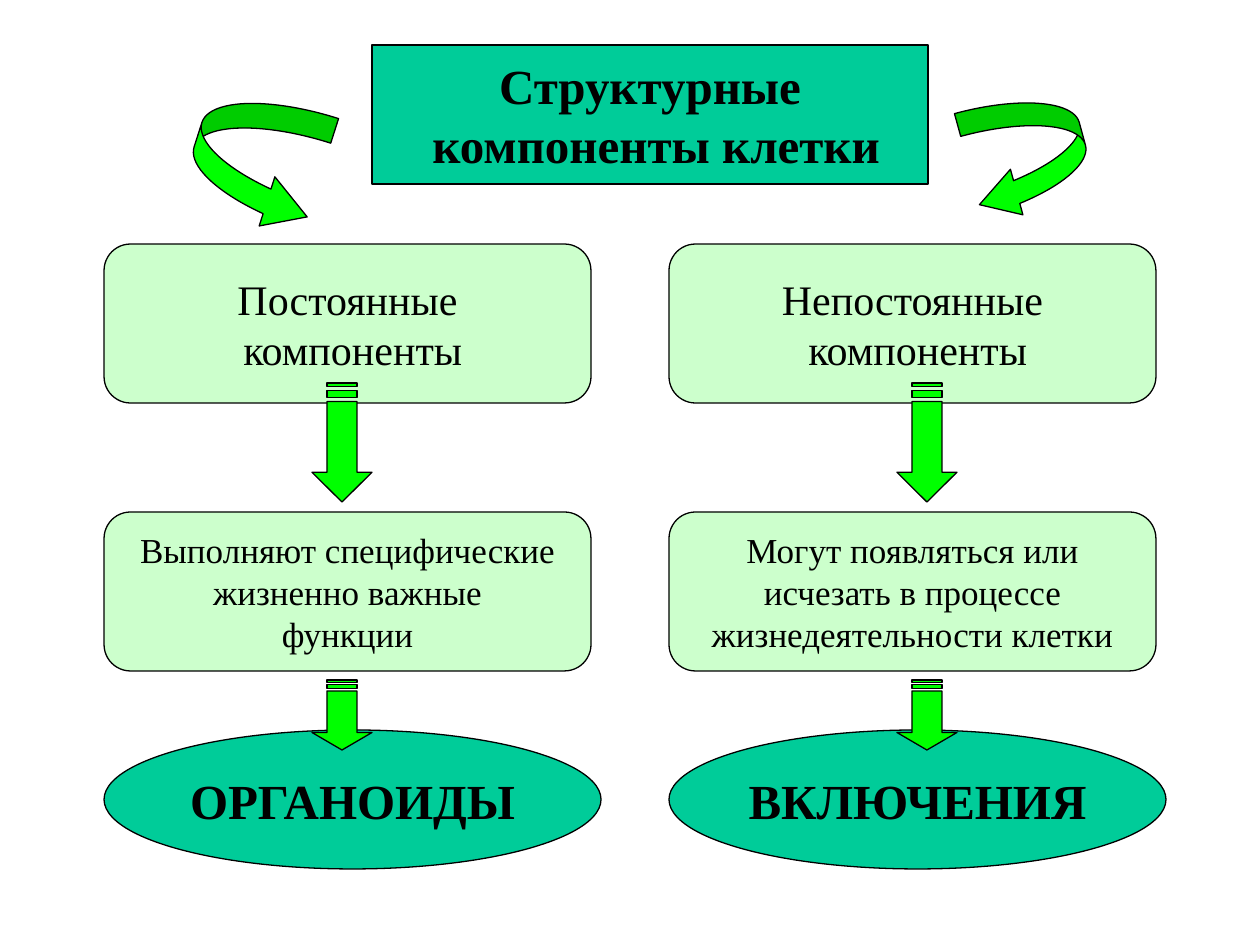
from dataclasses import dataclass

from lxml import etree
from pptx import Presentation
from pptx.dml.color import RGBColor
from pptx.enum.shapes import MSO_SHAPE
from pptx.enum.text import MSO_ANCHOR, MSO_AUTO_SIZE, PP_ALIGN
from pptx.oxml.ns import qn
from pptx.shapes.autoshape import Shape
from pptx.slide import Slide
from pptx.util import Inches, Pt

ROUNDED = MSO_SHAPE.ROUNDED_RECTANGLE
OVAL = MSO_SHAPE.OVAL
CURVED_RIGHT = MSO_SHAPE.CURVED_RIGHT_ARROW
CURVED_LEFT = MSO_SHAPE.CURVED_LEFT_ARROW
MIDDLE = MSO_ANCHOR.MIDDLE
CENTER = PP_ALIGN.CENTER
NO_AUTOFIT = MSO_AUTO_SIZE.NONE

COLORS = {
    "accent": "00CC99",
    "box": "CCFFCC",
    "arrow": "00FF00",
    "ink": "000000",
}
FONT = "Times New Roman"
PX = Inches(1) / 126
TITLE_ONLY = 5


@dataclass
class Node:
    kind: MSO_SHAPE
    x: int
    y: int
    w: int
    h: int
    lines: list[str]
    size: int
    color: str = "box"
    bold: bool = False


@dataclass
class CurvedArrow:
    kind: MSO_SHAPE
    x: int
    y: int
    side: int
    rotation: float


@dataclass
class Column:
    x: int
    arrow_x: int
    group: list[str]
    role: list[str]
    result: str


TITLE = Node(ROUNDED, 372, 45, 556, 139, ["Структурные", " компоненты клетки"],
             28, "accent", True)
CURVED_ARROWS = [
    CurvedArrow(CURVED_RIGHT, 193, 96, 129, 17.7),
    CurvedArrow(CURVED_LEFT, 968, 96, 118, 344.7),
]
COLUMNS = [
    Column(104, 312, ["Постоянные", " компоненты"],
           ["Выполняют специфические", "жизненно важные", "функции"],
           "ОРГАНОИДЫ"),
    Column(669, 897, ["Непостоянные", " компоненты"],
           ["Могут появляться или", "исчезать в процессе",
            "жизнедеятельности клетки"],
           "ВКЛЮЧЕНИЯ"),
]


def emu(px: float) -> int:
    return round(px * PX)


def paint(sp: Shape, color: str) -> None:
    sp.fill.solid()
    sp.fill.fore_color.rgb = RGBColor.from_string(COLORS[color])
    sp.line.color.rgb = RGBColor.from_string(COLORS["ink"])
    sp.line.width = Pt(0.75)


def write(sp: Shape, node: Node) -> None:
    tf = sp.text_frame
    tf.text = "\n".join(node.lines)
    tf.word_wrap = False
    tf.auto_size = NO_AUTOFIT
    tf.vertical_anchor = MIDDLE
    for p in tf.paragraphs:
        p.alignment = CENTER
        p.font.name = FONT
        p.font.size = Pt(node.size)
        p.font.bold = node.bold
        p.font.color.rgb = RGBColor.from_string(COLORS["ink"])


def add_title(slide: Slide, node: Node) -> None:
    sp = slide.shapes.title
    sp.left, sp.top = emu(node.x), emu(node.y)
    sp.width, sp.height = emu(node.w), emu(node.h)
    geom = etree.SubElement(sp._element.spPr, qn("a:prstGeom"), prst="roundRect")
    etree.SubElement(geom, qn("a:avLst"))
    paint(sp, node.color)
    write(sp, node)


def add_node(slide: Slide, node: Node) -> None:
    sp = slide.shapes.add_shape(
        node.kind, emu(node.x), emu(node.y), emu(node.w), emu(node.h))
    sp.shadow.inherit = False
    paint(sp, node.color)
    write(sp, node)


def add_curved_arrow(slide: Slide, arrow: CurvedArrow) -> None:
    side = emu(arrow.side)
    sp = slide.shapes.add_shape(arrow.kind, emu(arrow.x), emu(arrow.y), side, side)
    sp.shadow.inherit = False
    sp.rotation = arrow.rotation
    for i, value in enumerate((0.2, 0.4, 0.333)):
        sp.adjustments[i] = value
    paint(sp, "arrow")


def add_striped_arrow(slide: Slide, x: int, y: int, w: int, h: int) -> None:
    def at(fx: float, fy: float) -> tuple[int, int]:
        return emu(x + w * fx), emu(y + h * fy)

    left, right = 1 / 4, 3 / 4
    head, shaft = 3 / 4, 5 / 32
    builder = slide.shapes.build_freeform(*at(1, head))
    builder.add_line_segments(
        [at(right, head), at(right, shaft), at(left, shaft), at(left, head),
         at(0, head), at(0.5, 1)], close=True)
    for top, bottom in ((2 / 32, 4 / 32), (0, 1 / 32)):
        builder.move_to(*at(right, top))
        builder.add_line_segments(
            [at(left, top), at(left, bottom), at(right, bottom)], close=True)
    sp = builder.convert_to_shape()
    sp.shadow.inherit = False
    paint(sp, "arrow")


def main() -> None:
    prs = Presentation()
    prs.slide_width, prs.slide_height = Inches(10), Inches(7.5)
    slide = prs.slides.add_slide(prs.slide_layouts[TITLE_ONLY])
    add_title(slide, TITLE)
    for arrow in CURVED_ARROWS:
        add_curved_arrow(slide, arrow)
    for col in COLUMNS:
        add_node(slide, Node(ROUNDED, col.x, 244, 487, 159, col.group, 24))
        add_node(slide, Node(ROUNDED, col.x, 512, 487, 159, col.role, 20))
        add_node(slide, Node(OVAL, col.x, 730, 497, 139, [col.result], 28,
                             "accent", True))
        add_striped_arrow(slide, col.arrow_x, 383, 60, 119)
        add_striped_arrow(slide, col.arrow_x, 680, 60, 70)
    prs.save("out.pptx")


if __name__ == "__main__":
    main()
